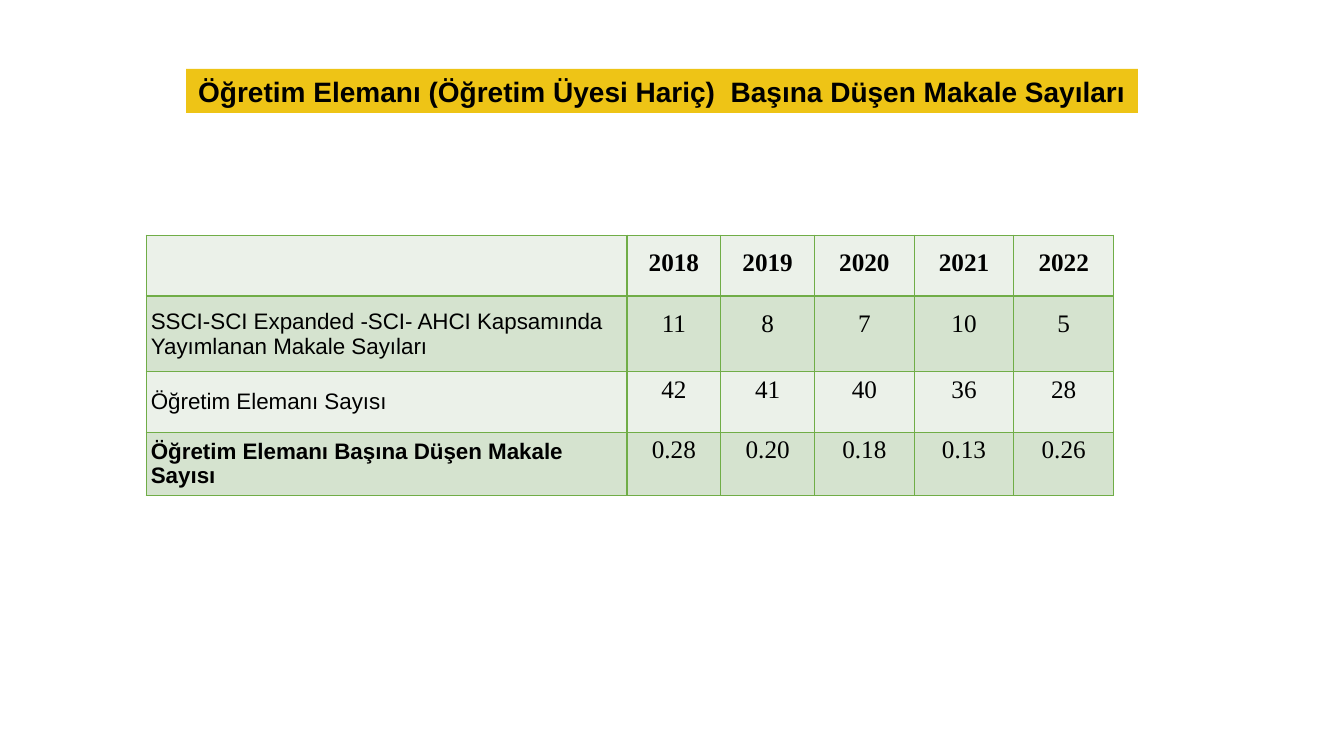
from lxml import etree
from pptx import Presentation
from pptx.dml.color import RGBColor
from pptx.enum.shapes import MSO_SHAPE
from pptx.enum.text import MSO_ANCHOR, PP_ALIGN
from pptx.oxml.ns import qn
from pptx.util import Pt

RECTANGLE = MSO_SHAPE.RECTANGLE
TOP, MIDDLE = MSO_ANCHOR.TOP, MSO_ANCHOR.MIDDLE
LEFT, CENTER = PP_ALIGN.LEFT, PP_ALIGN.CENTER

TITLE = "Öğretim Elemanı (Öğretim Üyesi Hariç)  Başına Düşen Makale Sayıları"
ROWS = [
    ("", "2018", "2019", "2020", "2021", "2022"),
    ("SSCI-SCI Expanded -SCI- AHCI Kapsamında Yayımlanan Makale Sayıları",
     "11", "8", "7", "10", "5"),
    ("Öğretim Elemanı Sayısı", "42", "41", "40", "36", "28"),
    ("Öğretim Elemanı Başına Düşen Makale Sayısı",
     "0.28", "0.20", "0.18", "0.13", "0.26"),
]
COLUMN_WIDTHS = [343.5, 67, 67, 71.2, 71.2, 71.2]
ROW_HEIGHTS = [43.4, 54.2, 43.2, 45]
LINE_SPACINGS = [1.5, 1.5, 1.15, 1.15]
COLORS = {
    "title": "EEC416",
    "text": "000000",
    "border": "70AD47",
    "light": "EBF1E9",
    "dark": "D5E3CF",
}


def fill_solid(target, color):
    target.fill.solid()
    target.fill.fore_color.rgb = RGBColor.from_string(COLORS[color])


def add_text(paragraph, text, font_name, size, bold, alignment):
    paragraph.alignment = alignment
    run = paragraph.add_run()
    run.text = text
    run.font.name = font_name
    run.font.size = Pt(size)
    run.font.bold = bold
    run.font.color.rgb = RGBColor.from_string(COLORS["text"])


def add_borders(cell):
    properties = cell._tc.get_or_add_tcPr()
    for side in ("lnL", "lnR", "lnT", "lnB"):
        line = etree.SubElement(properties, qn(f"a:{side}"), w=str(Pt(1)))
        solid = etree.SubElement(line, qn("a:solidFill"))
        etree.SubElement(solid, qn("a:srgbClr"), val=COLORS["border"])


def add_title(slide):
    shape = slide.shapes.add_shape(RECTANGLE, Pt(133), Pt(49.2), Pt(679.8), Pt(31.5))
    shape.shadow.inherit = False
    fill_solid(shape, "title")
    shape.line.fill.background()
    frame = shape.text_frame
    frame.word_wrap = False
    frame.vertical_anchor = MIDDLE
    add_text(frame.paragraphs[0], TITLE, "Arial", 20, True, CENTER)


def add_article_table(slide):
    table = slide.shapes.add_table(
        len(ROWS), len(COLUMN_WIDTHS), Pt(104.4), Pt(168),
        Pt(sum(COLUMN_WIDTHS)), Pt(sum(ROW_HEIGHTS))).table
    table.first_row = False
    table.horz_banding = False
    for column, width in zip(table.columns, COLUMN_WIDTHS):
        column.width = Pt(width)
    for row_index, values in enumerate(ROWS):
        table.rows[row_index].height = Pt(ROW_HEIGHTS[row_index])
        for column_index, text in enumerate(values):
            cell = table.cell(row_index, column_index)
            is_label = column_index == 0
            cell.margin_left = cell.margin_right = Pt(3.4 if is_label else 5)
            cell.margin_top = cell.margin_bottom = Pt(0)
            cell.vertical_anchor = MIDDLE if is_label else TOP
            add_borders(cell)
            fill_solid(cell, "dark" if row_index % 2 else "light")
            if not text:
                continue
            paragraph = cell.text_frame.paragraphs[0]
            if is_label:
                is_total = row_index == len(ROWS) - 1
                add_text(paragraph, text, "Arial", 16, is_total, LEFT)
            else:
                paragraph.line_spacing = LINE_SPACINGS[row_index]
                add_text(paragraph, text, "Times New Roman", 18, row_index == 0, CENTER)


def main():
    presentation = Presentation()
    presentation.slide_width = Pt(960)
    presentation.slide_height = Pt(540)
    slide = presentation.slides.add_slide(presentation.slide_layouts[6])
    add_title(slide)
    add_article_table(slide)
    presentation.save("out.pptx")


if __name__ == "__main__":
    main()
